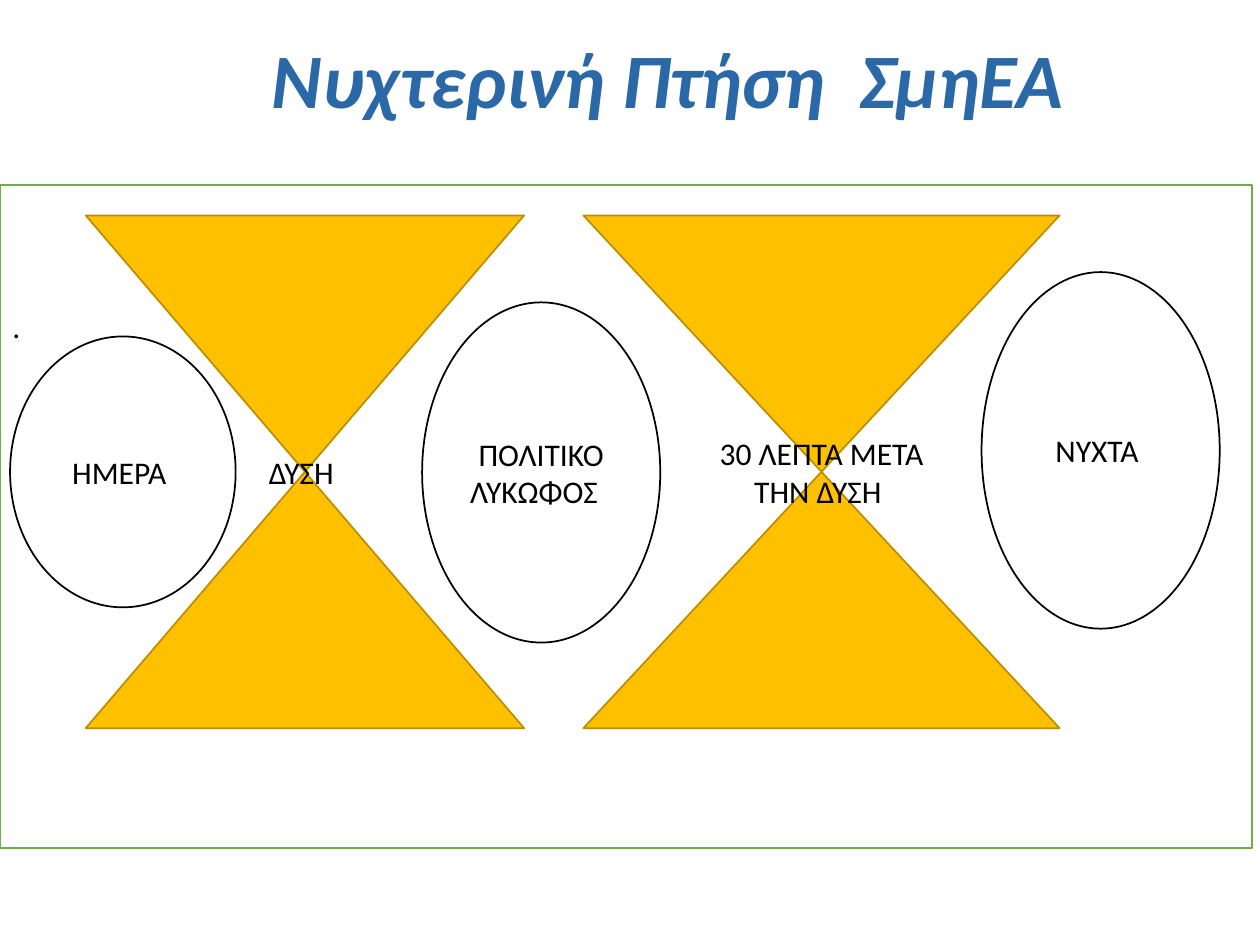
import pptx
import pptx.util
import pptx.dml.color
import pptx.enum.shapes
import pptx.enum.text

COLORS = {
    "title": "2A68A7", "text": "000000", "paper": "FFFFFF",
    "frame": "70AD47", "amber": "FFC000", "amber edge": "BD8E00",
}
SHAPES = pptx.enum.shapes.MSO_SHAPE
ALIGN = pptx.enum.text.PP_ALIGN
ANCHOR = pptx.enum.text.MSO_ANCHOR

presentation = pptx.Presentation()
presentation.slide_width = pptx.util.Inches(10)
presentation.slide_height = pptx.util.Inches(7.5)
slide = presentation.slides.add_slide(presentation.slide_layouts[6])

# Grid of 100 columns by 75 rows
COLUMN = presentation.slide_width / 100
ROW = presentation.slide_height / 75


def rgb(name):
    return pptx.dml.color.RGBColor.from_string(COLORS[name])


def write(shape, text, size=18, color="text", bold=False, italic=False,
          align=ALIGN.CENTER, anchor=ANCHOR.MIDDLE, spacing=1.0):
    frame = shape.text_frame
    frame.word_wrap = True
    frame.vertical_anchor = anchor
    paragraph = frame.paragraphs[0]
    paragraph.alignment = align
    paragraph.line_spacing = spacing
    run = paragraph.add_run()
    run.text = text
    run.font.name = "Calibri"
    run.font.size = pptx.util.Pt(size)
    run.font.bold = bold
    run.font.italic = italic
    run.font.color.rgb = rgb(color)


# Title
title = slide.shapes.add_textbox(
    int(20.6 * COLUMN), int(1.6 * ROW), int(77.8 * COLUMN), int(10 * ROW))
write(title, "Νυχτερινή Πτήση  ΣμηΕΑ", size=44, color="title",
      bold=True, italic=True, align=ALIGN.LEFT, spacing=0.9)

# Frame, phases of the day (ellipses) and the moments between them, back to front:
# preset, left, top, width, height, fill, line, text
HOURGLASS = SHAPES.FLOWCHART_COLLATE
parts = [
    (SHAPES.RECTANGLE, 0, 14.7, 99.4, 52.6, "paper", "frame", "."),
    (SHAPES.OVAL, 33.5, 24, 18.9, 27, "paper", "text", "ΠΟΛΙΤΙΚΟ ΛΥΚΩΦΟΣ  "),
    (HOURGLASS, 6.8, 17.1, 34.8, 40.7, "amber", "amber edge", "ΔΥΣΗ "),
    (HOURGLASS, 46.3, 17.1, 37.8, 40.7, "amber", "amber edge",
     "30 ΛΕΠΤΑ ΜΕΤΑ ΤΗΝ ΔΥΣΗ "),
    (SHAPES.OVAL, 77.9, 21.6, 18.9, 28.3, "paper", "text", "ΝΥΧΤΑ "),
    (SHAPES.OVAL, 0.8, 26.7, 17.9, 21.5, "paper", "text", "ΗΜΕΡΑ "),
]
for preset, left, top, width, height, fill, line, text in parts:
    shape = slide.shapes.add_shape(
        preset, int(left * COLUMN), int(top * ROW),
        int(width * COLUMN), int(height * ROW))
    shape.shadow.inherit = False
    shape.fill.solid()
    shape.fill.fore_color.rgb = rgb(fill)
    shape.line.color.rgb = rgb(line)
    shape.line.width = pptx.util.Pt(1)
    if preset == SHAPES.RECTANGLE:
        shape.text_frame.margin_top = int(10 * ROW)
        write(shape, text, align=ALIGN.LEFT, anchor=ANCHOR.TOP, spacing=0.9)
    else:
        write(shape, text)

presentation.save("out.pptx")
